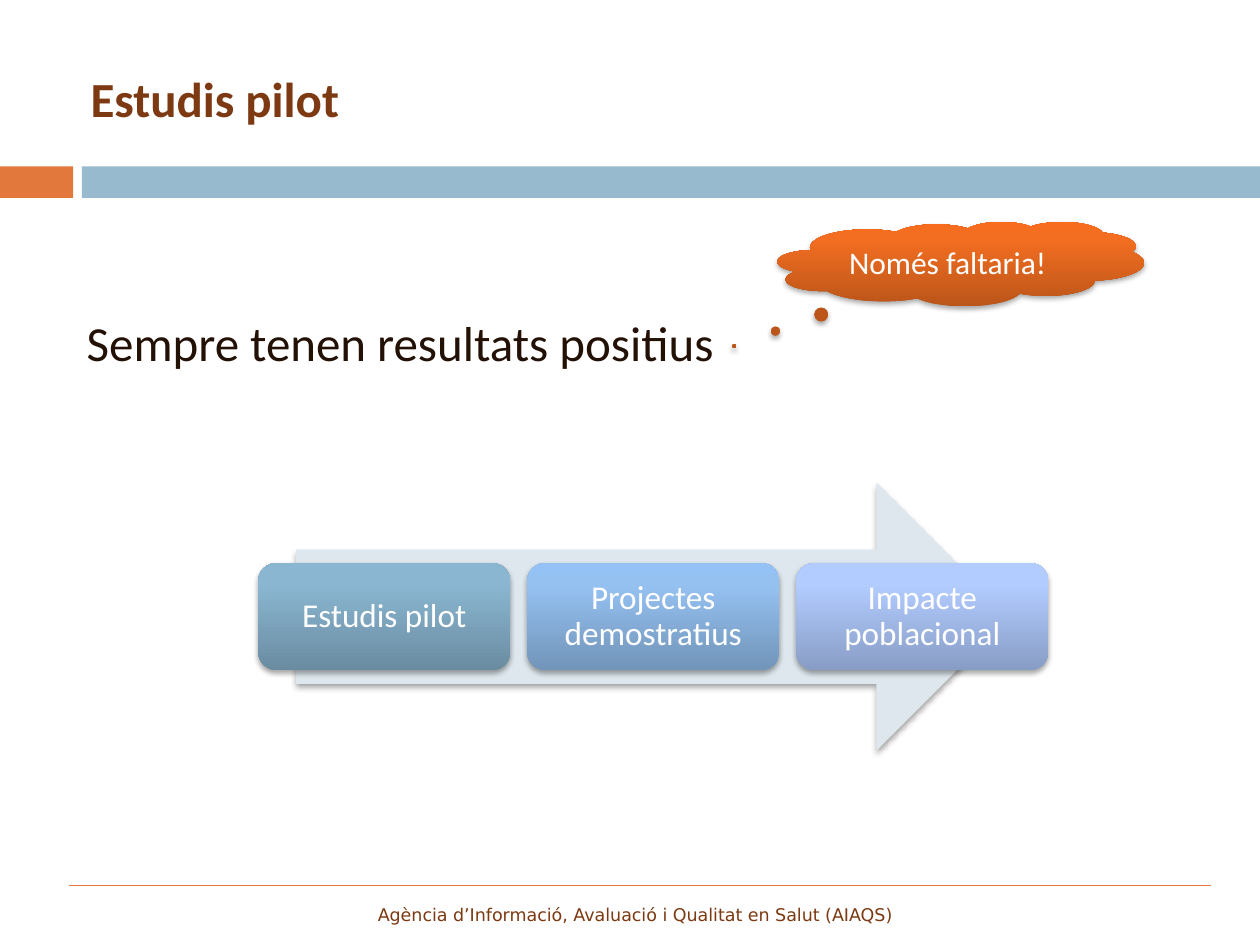
from copy import deepcopy

from lxml import etree
from pptx import Presentation
from pptx.dml.color import RGBColor
from pptx.enum.shapes import MSO_CONNECTOR, MSO_SHAPE
from pptx.enum.text import MSO_ANCHOR, PP_ALIGN
from pptx.oxml.ns import qn
from pptx.util import Inches, Pt

RECT = MSO_SHAPE.RECTANGLE
ROUNDED = MSO_SHAPE.ROUNDED_RECTANGLE
ARROW = MSO_SHAPE.RIGHT_ARROW
CLOUD = MSO_SHAPE.CLOUD_CALLOUT
STRAIGHT = MSO_CONNECTOR.STRAIGHT
MIDDLE, BOTTOM, TOP = MSO_ANCHOR.MIDDLE, MSO_ANCHOR.BOTTOM, MSO_ANCHOR.TOP
LEFT, CENTER = PP_ALIGN.LEFT, PP_ALIGN.CENTER

ORANGE = RGBColor(0xE2, 0x78, 0x3B)
BLUE = RGBColor(0x97, 0xBA, 0xCF)
BROWN = RGBColor(0x7C, 0x39, 0x12)
DARK = RGBColor(0x23, 0x11, 0x06)
WHITE = RGBColor(0xFF, 0xFF, 0xFF)
PALE = RGBColor(0xDD, 0xE7, 0xED)
# Gradients run from the bottom edge to the top edge.
GRADIENT_STOPS = (0, 0.8, 1)
CLOUD_COLORS = (RGBColor(0xBB, 0x55, 0x19), RGBColor(0xF3, 0x6E, 0x21),
                RGBColor(0xF8, 0x6D, 0x1D))
STAGES = (
    ("Estudis pilot", (RGBColor(0x6A, 0x8C, 0xA1), RGBColor(0x8A, 0xB6, 0xD1),
                       RGBColor(0x89, 0xB7, 0xD3))),
    ("Projectes demostratius", (RGBColor(0x72, 0x95, 0xBA), RGBColor(0x95, 0xC1, 0xF1),
                                RGBColor(0x94, 0xC2, 0xF4))),
    ("Impacte poblacional", (RGBColor(0x88, 0x9D, 0xC5), RGBColor(0xB2, 0xCC, 0xFF),
                             RGBColor(0xB4, 0xCD, 0xFF))),
)

SLIDE_W, SLIDE_H = 10, 7.5
BODY_FONT, FOOTER_FONT = "Calibri", "DejaVu Sans"


def add_plain_shape(shapes, kind, box, color=None):
    shape = shapes.add_shape(kind, *map(Inches, box))
    shape.shadow.inherit = False
    shape.line.fill.background()
    if color is not None:
        shape.fill.solid()
        shape.fill.fore_color.rgb = color
    return shape


def fill_gradient(shape, colors):
    shape.fill.gradient()
    shape.fill.gradient_angle = 90
    stop_list = shape._element.spPr.find(qn("a:gradFill")).find(qn("a:gsLst"))
    stop_list.append(deepcopy(stop_list[-1]))
    for stop, position, color in zip(shape.fill.gradient_stops, GRADIENT_STOPS, colors):
        stop.position = position
        stop.color.rgb = color


def drop_shadow(shape):
    effects = shape._element.spPr.find(qn("a:effectLst"))
    shadow = etree.SubElement(effects, qn("a:outerShdw"), blurRad=str(Pt(3.1)),
                              dist=str(Pt(1.8)), dir="5400000", rotWithShape="0")
    color = etree.SubElement(shadow, qn("a:srgbClr"), val="000000")
    etree.SubElement(color, qn("a:alpha"), val="35000")


def write(frame, text, size, color, font=BODY_FONT, align=LEFT, anchor=TOP,
          bold=False, wrap=True):
    frame.word_wrap = wrap
    frame.vertical_anchor = anchor
    paragraph = frame.paragraphs[0]
    paragraph.alignment = align
    run = paragraph.add_run()
    run.text = text
    run.font.size, run.font.name, run.font.bold = Pt(size), font, bold
    run.font.color.rgb = color
    return paragraph


def add_label(shapes, box, *args, **style):
    write(shapes.add_textbox(*map(Inches, box)).text_frame, *args, **style)


def add_header(shapes, box):
    """Title above a two-colour band that closes the region."""
    left, top, width, height = box
    band_h = 0.25
    band_top = top + height - band_h
    tab_w, gap = 0.58, 0.07
    add_plain_shape(shapes, RECT, (left, band_top, tab_w, band_h), ORANGE)
    band_left = left + tab_w + gap
    add_plain_shape(shapes, RECT, (band_left, band_top, width - band_left, band_h), BLUE)
    add_label(shapes, (left + 0.62, top + 0.31, 8.88, 0.94), "Estudis pilot",
              28, BROWN, anchor=MIDDLE, bold=True)


def add_statement(shapes, box):
    """Sentence at lower left, with a thought cloud at upper right."""
    left, top, width, height = box
    add_label(shapes, (left, top + height - 0.57, 5.23, 0.57),
              "Sempre tenen resultats positius", 28, DARK, wrap=False)
    cloud_w = 2.91
    cloud = add_plain_shape(shapes, CLOUD, (left + width - cloud_w, top, cloud_w, 0.67))
    cloud.adjustments[0], cloud.adjustments[1] = -0.618, 0.974
    fill_gradient(cloud, CLOUD_COLORS)
    drop_shadow(cloud)
    write(cloud.text_frame, "Només faltaria!", 18, WHITE, align=CENTER, anchor=MIDDLE)


def add_process(shapes, box):
    """Equal stages in a row over a wide arrow."""
    left, top, width, height = box
    group = shapes.add_group_shape().shapes
    arrow_inset = 0.3
    arrow = add_plain_shape(group, ARROW, (left + arrow_inset, top,
                                           width - 2 * arrow_inset, height), PALE)
    drop_shadow(arrow)
    stage_w, stage_h = 2, 0.4 * height
    pitch = (width - stage_w) / (len(STAGES) - 1)
    for column, (name, colors) in enumerate(STAGES):
        stage = add_plain_shape(group, ROUNDED, (left + column * pitch,
                                                 top + 0.3 * height, stage_w, stage_h))
        fill_gradient(stage, colors)
        drop_shadow(stage)
        frame = stage.text_frame
        frame.margin_left = frame.margin_right = Inches(0.12)
        frame.margin_top = frame.margin_bottom = Inches(0.12)
        paragraph = write(frame, name, 19, WHITE, align=CENTER, anchor=MIDDLE)
        paragraph.line_spacing = 0.9


def add_footer(shapes, box):
    left, top, width, height = box
    rule = shapes.add_connector(STRAIGHT, Inches(left), Inches(top),
                                Inches(left + width), Inches(top))
    rule.line.color.rgb = ORANGE
    rule.line.width = Pt(0.75)
    etree.SubElement(rule._element.spPr, qn("a:effectLst"))
    add_label(shapes, (left, top, width - 0.08, height),
              "Agència d’Informació, Avaluació i Qualitat en Salut (AIAQS)",
              10, BROWN, font=FOOTER_FONT, align=CENTER, anchor=BOTTOM)


def main():
    deck = Presentation()
    deck.slide_width, deck.slide_height = Inches(SLIDE_W), Inches(SLIDE_H)
    shapes = deck.slides.add_slide(deck.slide_layouts[6]).shapes
    add_header(shapes, (0, 0, SLIDE_W, 1.57))
    add_footer(shapes, (0.55, 7.03, 9.06, 0.36))
    add_statement(shapes, (0.59, 1.76, 8.49, 1.24))
    add_process(shapes, (2.05, 3.83, 6.27, 2.13))
    deck.save("out.pptx")


if __name__ == "__main__":
    main()
